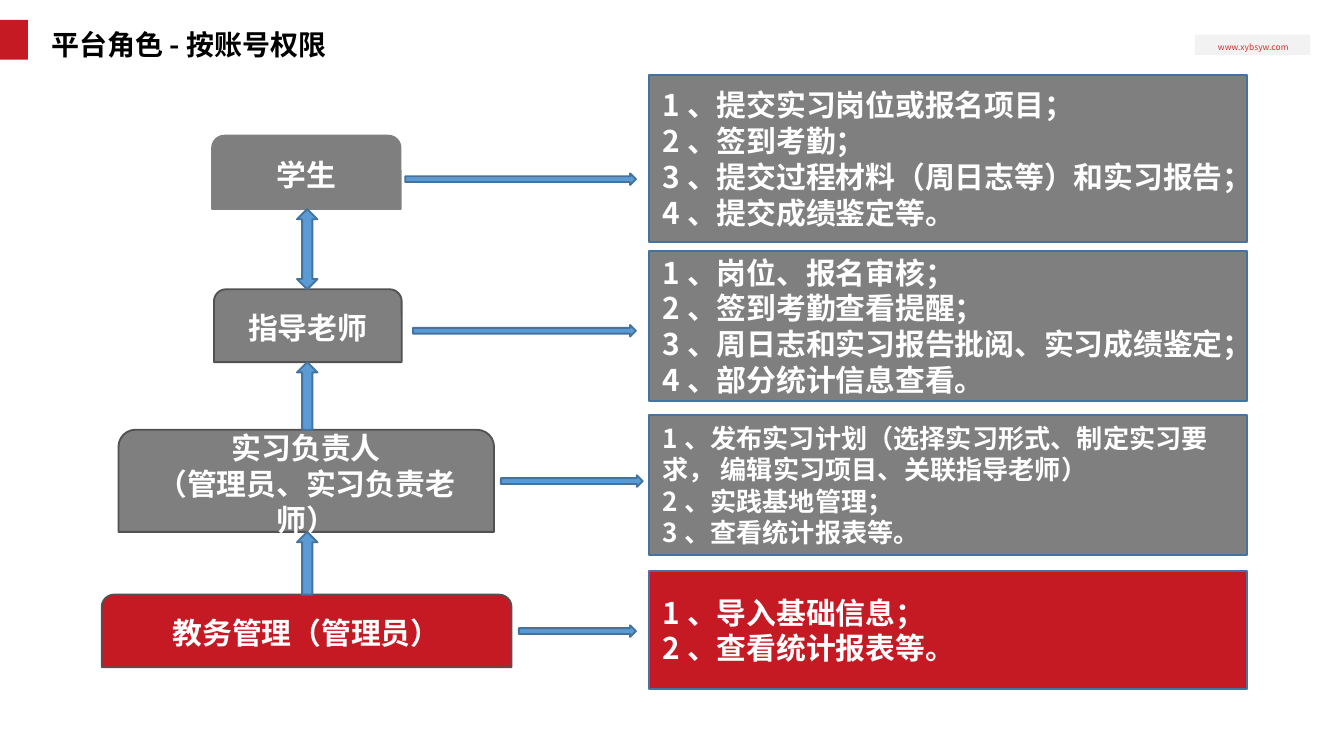
from dataclasses import dataclass
from typing import NamedTuple

from lxml import etree
from pptx import Presentation
from pptx.dml.color import RGBColor
from pptx.enum.shapes import MSO_SHAPE as Shape
from pptx.enum.text import MSO_ANCHOR as Anchor, PP_ALIGN as Align
from pptx.oxml.ns import qn
from pptx.util import Pt


@dataclass(frozen=True)
class Theme:
    font: str = "Noto Sans CJK SC"
    red: str = "C51A24"
    gray: str = "7F7F7F"
    role_line: str = "525252"
    student_line: str = "808080"
    blue: str = "5B9BD5"
    blue_line: str = "43739E"
    badge: str = "F2F2F2"
    address: str = "D62F2F"
    white: str = "FFFFFF"
    black: str = "000000"
    title_size: float = 15
    body_size: float = 16
    small_size: float = 14
    address_size: float = 4.5


class Box(NamedTuple):
    left: float
    top: float
    width: float
    height: float

    @property
    def bottom(self):
        return self.top + self.height

    def points(self):
        return [Pt(length) for length in self]

    def inner(self, left, top, width, height):
        return Box(self.left + left, self.top + top, width, height)


class Role(NamedTuple):
    names: list
    box: Box
    line: str
    fill: str
    arrow: Box
    panel: Box
    duties: list
    size: float


THEME = Theme()
LINK_CENTER = 164.6
LINK_WIDTH = 11
LINKS = [Shape.UP_DOWN_ARROW, Shape.UP_ARROW, Shape.UP_ARROW]

ROLES = [
    Role(["学生"], Box(113.6, 72.7, 101, 39.3), THEME.student_line, THEME.gray,
         Box(217.1, 92.9, 123.6, 6.2), Box(347.8, 40.2, 320.4, 89.6),
         ["1、提交实习岗位或报名项目；", "2、签到考勤；",
          "3、提交过程材料（周日志等）和实习报告；", "4、提交成绩鉴定等。"],
         THEME.body_size),
    Role(["指导老师"], Box(114.6, 155, 100.6, 39), THEME.role_line, THEME.gray,
         Box(221.3, 174.1, 119.4, 6.2), Box(347.8, 134.5, 320.4, 80.2),
         ["1、岗位、报名审核；", "2、签到考勤查看提醒；",
          "3、周日志和实习报告批阅、实习成绩鉴定；", "4、部分统计信息查看。"],
         THEME.body_size),
    Role(["实习负责人", "（管理员、实习负责老师）"],
         Box(63.5, 230.3, 201.2, 54.7), THEME.role_line, THEME.gray,
         Box(268.3, 254.6, 76, 6.2), Box(347.8, 222.5, 320.4, 74.9),
         ["1、发布实习计划（选择实习形式、制定实习要求， 编辑实习项目、关联指导老师）",
          "2、实践基地管理；", "3、查看统计报表等。"],
         THEME.small_size),
    Role(["教务管理（管理员）"], Box(54.5, 318.6, 219.5, 38.9), THEME.role_line, THEME.red,
         Box(278, 335, 62.7, 6.2), Box(347.8, 306, 320.4, 63.2),
         ["1、导入基础信息；", "2、查看统计报表等。"],
         THEME.body_size),
]


def write(frame, lines, size, color, align, anchor, bold=True):
    frame.word_wrap = True
    frame.vertical_anchor = anchor
    for index, line in enumerate(lines):
        paragraph = frame.add_paragraph() if index else frame.paragraphs[0]
        paragraph.alignment = align
        run = paragraph.add_run()
        run.text = line
        run.font.name = THEME.font
        run.font.size = Pt(size)
        run.font.bold = bold
        run.font.color.rgb = RGBColor.from_string(color)
        east_asian = etree.Element(qn("a:ea"), typeface=THEME.font)
        run.font._element.find(qn("a:latin")).addnext(east_asian)


def draw(slide, kind, box, fill, line=None):
    figure = slide.shapes.add_shape(kind, *box.points())
    figure.shadow.inherit = False
    figure.fill.solid()
    figure.fill.fore_color.rgb = RGBColor.from_string(fill)
    if line:
        figure.line.color.rgb = RGBColor.from_string(line)
        figure.line.width = Pt(1)
    else:
        figure.line.fill.background()
    return figure


def add_header(slide, box):
    draw(slide, Shape.RECTANGLE, box.inner(0, 10.6, 15, 21.4), THEME.red)
    draw(slide, Shape.RECTANGLE, box.inner(640.2, 18.6, 61.8, 10.8), THEME.badge)

    address = slide.shapes.add_textbox(*box.inner(648, 19.2, 46.8, 13).points()).text_frame
    address.margin_left = address.margin_right = Pt(3.6)
    address.margin_top = address.margin_bottom = Pt(3.6)
    write(address, ["www.xybsyw.com"], THEME.address_size, THEME.address,
          Align.CENTER, Anchor.TOP, bold=False)

    title = slide.shapes.title
    title.left, title.top, title.width, title.height = box.inner(20.2, 5.8, 430, 31).points()
    write(title.text_frame, ["平台角色-按账号权限"], THEME.title_size, THEME.black,
          Align.LEFT, Anchor.BOTTOM)
    title.text_frame.paragraphs[0].line_spacing = 0.9


def add_role(slide, role):
    card = draw(slide, Shape.ROUND_2_SAME_RECTANGLE, role.box, role.fill, role.line)
    write(card.text_frame, role.names, THEME.body_size, THEME.white,
          Align.CENTER, Anchor.MIDDLE)
    draw(slide, Shape.RIGHT_ARROW, role.arrow, THEME.blue, THEME.blue_line)
    panel = draw(slide, Shape.RECTANGLE, role.panel, role.fill, THEME.blue_line)
    write(panel.text_frame, role.duties, role.size, THEME.white,
          Align.LEFT, Anchor.MIDDLE)


def add_links(slide, roles):
    for kind, upper, lower in zip(LINKS, roles, roles[1:]):
        top = upper.box.bottom
        link = Box(LINK_CENTER - LINK_WIDTH / 2, top, LINK_WIDTH, lower.box.top - top)
        draw(slide, kind, link, THEME.blue, THEME.blue_line)


def main():
    deck = Presentation()
    deck.slide_width, deck.slide_height = Pt(720), Pt(405)
    slide = deck.slides.add_slide(deck.slide_layouts[5])
    add_header(slide, Box(0, 0, 720, 40))
    for role in ROLES:
        add_role(slide, role)
    add_links(slide, ROLES)
    deck.save("out.pptx")


if __name__ == "__main__":
    main()
